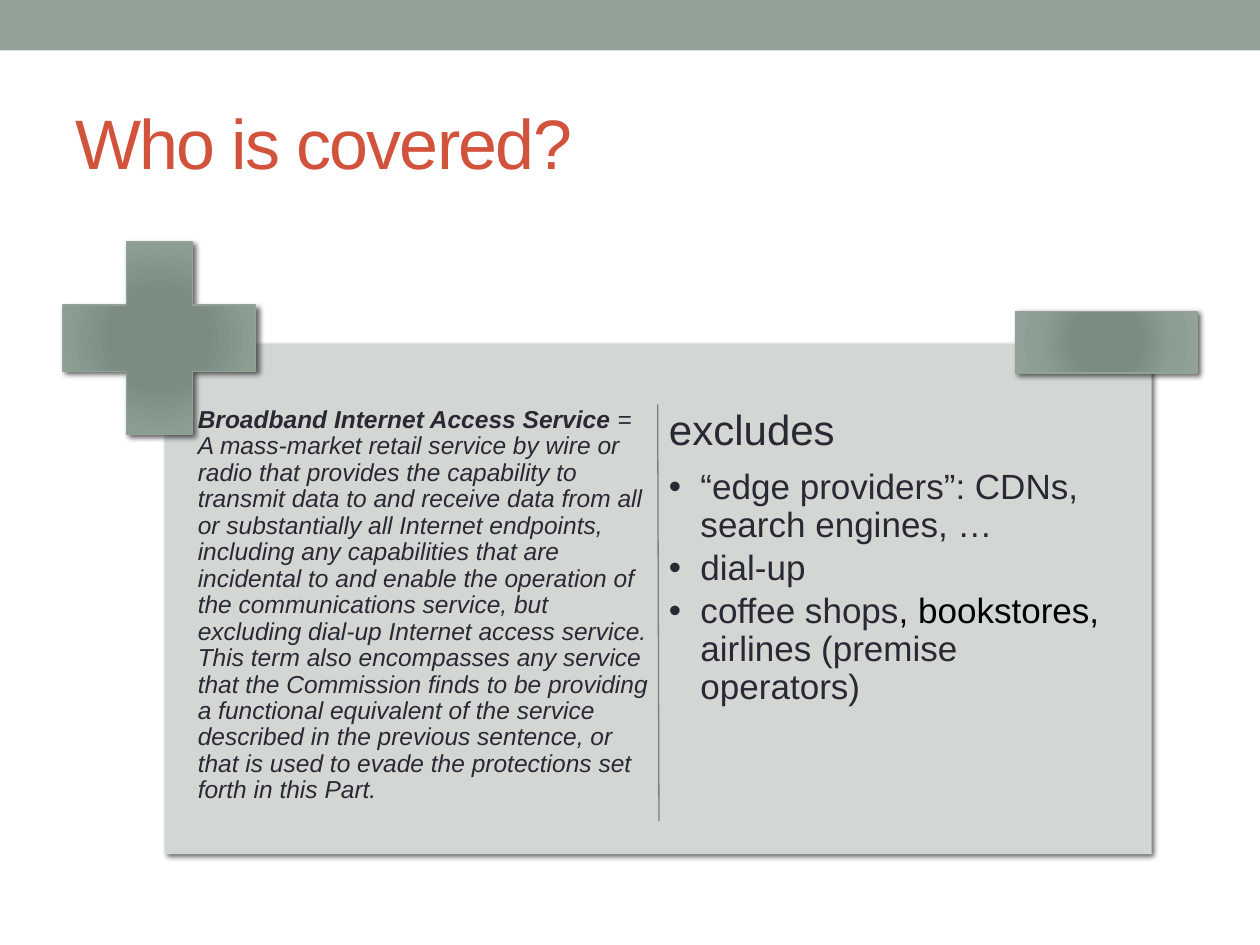
from lxml import etree
from pptx import Presentation
from pptx.dml.color import RGBColor
from pptx.enum.shapes import MSO_CONNECTOR as Link, MSO_SHAPE as Shape
from pptx.enum.text import MSO_ANCHOR as Anchor
from pptx.oxml import parse_xml
from pptx.oxml.ns import nsdecls, qn
from pptx.util import Inches, Pt

COLORS = {
    "band": "93A299", "title": "D2533C", "panel": "D2D7D4", "text": "292934",
    "black": "000000", "rule": "76827B",
}
STOPS = [(0, "7B8E82"), (34, "7B8D83"), (70, "8A9E92"), (100, "93A299")]
TERM = "Broadband Internet Access Service"
MEANING = (
    " = A mass-market retail service by wire or radio that provides the "
    "capability to transmit data to and receive data from all or substantially "
    "all Internet endpoints, including any capabilities that are incidental to "
    "and enable the operation of the communications service, but excluding "
    "dial-up Internet access service. This term also encompasses any service "
    "that the Commission finds to be providing a functional equivalent of the "
    "service described in the previous sentence, or that is used to evade the "
    "protections set forth in this Part."
)
EXCLUDED = [
    [("“edge providers”: CDNs, search engines, …", "text")],
    [("dial-up", "text")],
    [("coffee shops", "text"), (", bookstores, ", "black"),
     ("airlines (premise operators)", "text")],
]


def rgb(name):
    return RGBColor.from_string(COLORS[name])


def add_block(slide, kind, box, fill):
    shape = slide.shapes.add_shape(kind, *map(Inches, box))
    shape.shadow.inherit = False
    shape.fill.solid()
    shape.fill.fore_color.rgb = rgb(fill)
    shape.line.fill.background()
    return shape


def add_shadow(shape):
    effects = shape._element.spPr.find(qn("a:effectLst"))
    effects.append(parse_xml(
        f'<a:outerShdw {nsdecls("a")} blurRad="{Pt(3)}" dist="{Pt(2)}" '
        'dir="2700000" algn="br" rotWithShape="0"><a:srgbClr val="000000">'
        '<a:alpha val="60000"/></a:srgbClr></a:outerShdw>'))


def add_sign(slide, kind, box):
    sign = add_block(slide, kind, box, "band")
    sign.line.color.rgb = rgb("band")
    sign.line.width = Pt(0.75)
    add_shadow(sign)
    stops = "".join(
        f'<a:gs pos="{pos * 1000}"><a:srgbClr val="{tone}"/></a:gs>'
        for pos, tone in STOPS)
    props = sign._element.spPr
    props.replace(props.find(qn("a:solidFill")), parse_xml(
        f'<a:gradFill {nsdecls("a")} rotWithShape="1"><a:gsLst>{stops}</a:gsLst>'
        '<a:path path="circle"><a:fillToRect l="100000" t="100000" '
        'r="100000" b="100000"/></a:path></a:gradFill>'))
    return sign


def add_text(slide, box, inset):
    frame = slide.shapes.add_textbox(*map(Inches, box)).text_frame
    frame.word_wrap = True
    frame.margin_left = frame.margin_right = Inches(inset)
    frame.margin_top = frame.margin_bottom = Inches(inset)
    return frame


def add_run(para, text, size, color="text", bold=False, italic=False):
    run = para.add_run()
    run.text = text
    font = run.font
    font.name, font.size = "Arial", Pt(size)
    font.bold, font.italic = bold, italic
    font.color.rgb = rgb(color)
    return run


def set_space(para, size, share):
    para.line_spacing = 0.9
    para.space_after = Pt(size * share)


def set_bullet(para):
    props = para._p.get_or_add_pPr()
    props.set("marL", str(Inches(0.25)))
    props.set("indent", str(-Inches(0.25)))
    etree.SubElement(props, qn("a:buFont")).set("typeface", "Arial")
    etree.SubElement(props, qn("a:buChar")).set("char", "•")


def add_title(slide, box):
    frame = add_text(slide, box, 0.1)
    frame.vertical_anchor = Anchor.MIDDLE
    run = add_run(frame.paragraphs[0], "Who is covered?", 40, "title")
    run.font._element.set("spc", "-100")


def add_meaning(slide, box):
    para = add_text(slide, box, 0.03).paragraphs[0]
    set_space(para, 14, 0.35)
    add_run(para, TERM, 14, bold=True, italic=True)
    add_run(para, MEANING, 14, italic=True)


def add_excluded(slide, box):
    frame = add_text(slide, box, 0.05)
    head = frame.paragraphs[0]
    set_space(head, 24, 0.35)
    add_run(head, "excludes", 24)
    for item in EXCLUDED:
        para = frame.add_paragraph()
        set_space(para, 20, 0.15)
        set_bullet(para)
        for text, color in item:
            add_run(para, text, 20, color)


def add_rule(slide, start, end):
    rule = slide.shapes.add_connector(Link.STRAIGHT, *map(Inches, start + end))
    rule.line.color.rgb = rgb("rule")
    rule.line.width = Pt(0.75)
    etree.SubElement(rule._element.spPr, qn("a:effectLst"))


def add_panel(slide, box):
    left, top, width, height = box
    add_shadow(add_block(slide, Shape.RECTANGLE, box, "panel"))
    column = (top + 0.47, 3.64, height - 0.59)
    add_meaning(slide, (left + 0.23, *column))
    add_excluded(slide, (left + 3.95, *column))
    plus = add_sign(slide, Shape.CROSS, (left - 0.81, top - 0.81, 1.53, 1.53))
    plus.adjustments[0] = 0.328
    add_sign(slide, Shape.RECTANGLE, (left + width - 1.08, top - 0.26, 1.44, 0.49))
    add_rule(slide, (left + 3.91, top + 0.48), (left + 3.92, top + 3.79))


def main():
    deck = Presentation()
    deck.slide_width, deck.slide_height = Inches(10), Inches(7.5)
    slide = deck.slides.add_slide(deck.slide_layouts[6])
    add_block(slide, Shape.RECTANGLE, (0, 0, 10, 0.4), "band")
    add_title(slide, (0.5, 0.58, 9, 1.08))
    add_panel(slide, (1.31, 2.73, 7.83, 4.05))
    deck.save("out.pptx")


if __name__ == "__main__":
    main()
